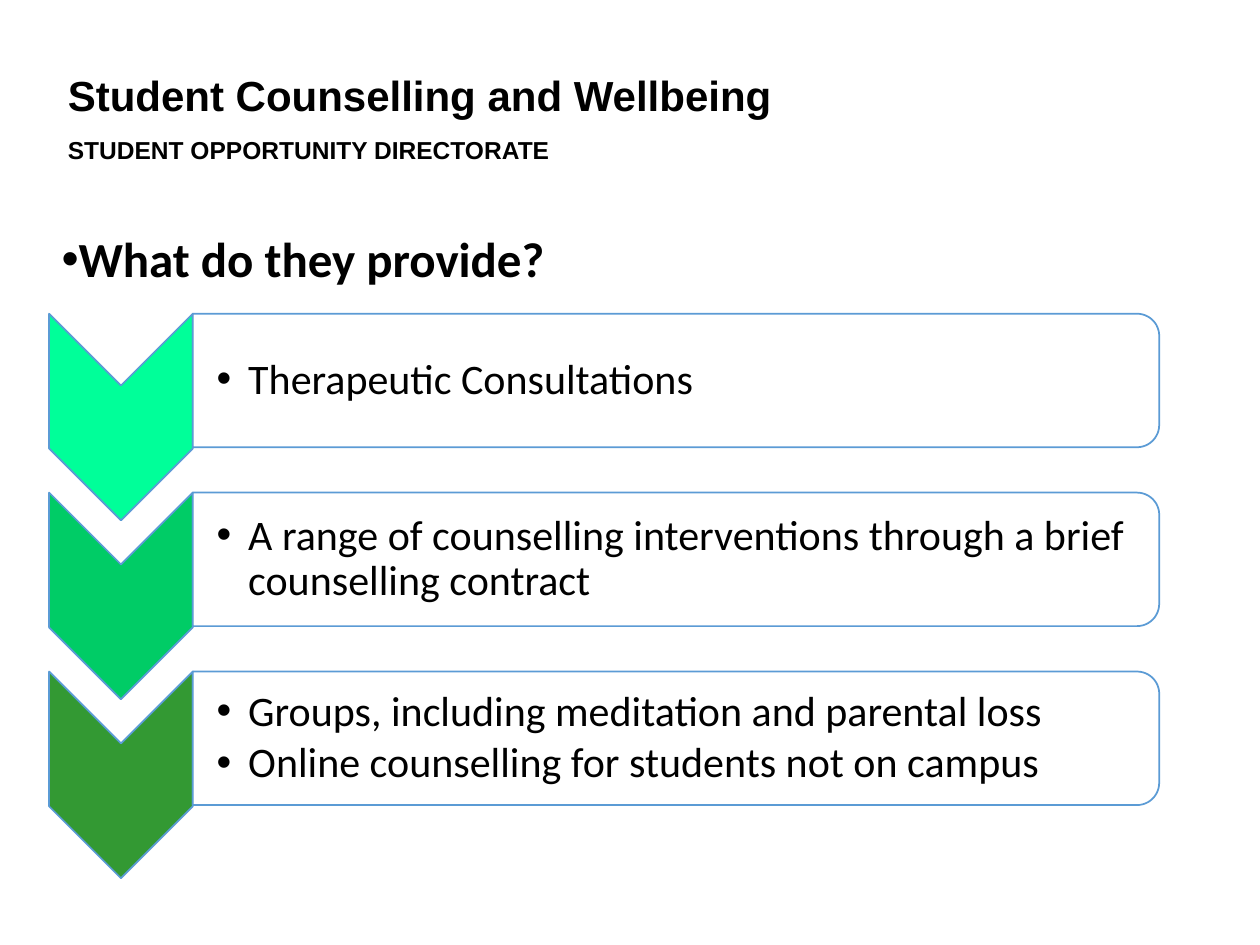
from lxml import etree
from pptx import Presentation, util as u
from pptx.dml.color import RGBColor
from pptx.enum import shapes, text
from pptx.oxml.ns import qn

HEAD = [("Student Counselling and Wellbeing", 24),
        ("STUDENT OPPORTUNITY DIRECTORATE", 14)]
ASK = [("What do they provide?", 28)]
ROWS = [
    ("00FF99", ["Therapeutic Consultations"]),
    ("00CC66", ["A range of counselling interventions through a brief counselling contract"]),
    ("339933", ["Groups, including meditation and parental loss",
                "Online counselling for students not on campus"]),
]
EDGE, INK, PAPER = "5B9BD5", "000000", "FFFFFF"
LEFT, TOP, STEP = 0.39, 2.49, 1.42
ARROW_W, ARROW_H = 1.14, 1.64
BAR_W, BAR_H = 7.67, 1.06


def color(code):
    return RGBColor.from_string(code)


def bullet(para, indent):
    props = para._p.get_or_add_pPr()
    props.set("marL", str(u.Inches(indent)))
    props.set("indent", str(-u.Inches(indent)))
    etree.SubElement(props, qn("a:buFont")).set("typeface", "Arial")
    etree.SubElement(props, qn("a:buChar")).set("char", "•")


def write(slide, box, items, face, bold=False, indent=None, before=0, after=0,
          inset=(0.1, 0.05, 0.1, 0.05), anchor=text.MSO_ANCHOR.TOP):
    frame = slide.shapes.add_textbox(*map(u.Inches, box)).text_frame
    frame.word_wrap = True
    frame.vertical_anchor = anchor
    (frame.margin_left, frame.margin_top,
     frame.margin_right, frame.margin_bottom) = map(u.Inches, inset)
    for i, (words, size) in enumerate(items):
        para = frame.paragraphs[0] if i == 0 else frame.add_paragraph()
        para.text = words
        if indent is not None:
            bullet(para, indent)
        para.line_spacing = 0.9
        para.space_before = u.Pt(before if i else 0)
        para.space_after = u.Pt(after)
        font = para.font
        font.name, font.size, font.bold = face, u.Pt(size), bold
        font.color.rgb = color(INK)


def turned(slide, kind, left, top, wide, high, fill):
    x, y = left + (wide - high) / 2, top + (high - wide) / 2
    shape = slide.shapes.add_shape(kind, *map(u.Inches, (x, y, high, wide)))
    shape.rotation = 90
    shape.shadow.inherit = False
    shape.fill.solid()
    shape.fill.fore_color.rgb = color(fill)
    shape.line.color.rgb = color(EDGE)
    shape.line.width = u.Pt(1)
    return shape


def main():
    deck = Presentation()
    deck.slide_width, deck.slide_height = u.Inches(10), u.Inches(7.5)
    slide = deck.slides.add_slide(deck.slide_layouts[6])
    write(slide, (0.44, 0.55, 6.36, 0.91), HEAD, "Arial", bold=True, before=10)
    write(slide, (LEFT, 1.82, 9.22, 0.6), ASK, "Calibri", bold=True, indent=0)
    kind = shapes.MSO_SHAPE
    x = LEFT + ARROW_W
    for i, (fill, lines) in enumerate(ROWS):
        y = TOP + i * STEP
        turned(slide, kind.CHEVRON, LEFT, y, ARROW_W, ARROW_H, fill)
        bar = turned(slide, kind.ROUND_2_SAME_RECTANGLE, x, y, BAR_W, BAR_H, PAPER)
        tone = bar._element.spPr.find(qn("a:solidFill"))[0]
        etree.SubElement(tone, qn("a:alpha")).set("val", "90000")
        write(slide, (x, y + 0.05, BAR_W - 0.05, BAR_H - 0.1),
              [(line, 24) for line in lines], "Calibri", indent=0.25, after=3.6,
              inset=(0.19, 0.02, 0.02, 0.02), anchor=text.MSO_ANCHOR.MIDDLE)
    deck.save("out.pptx")


if __name__ == "__main__":
    main()
